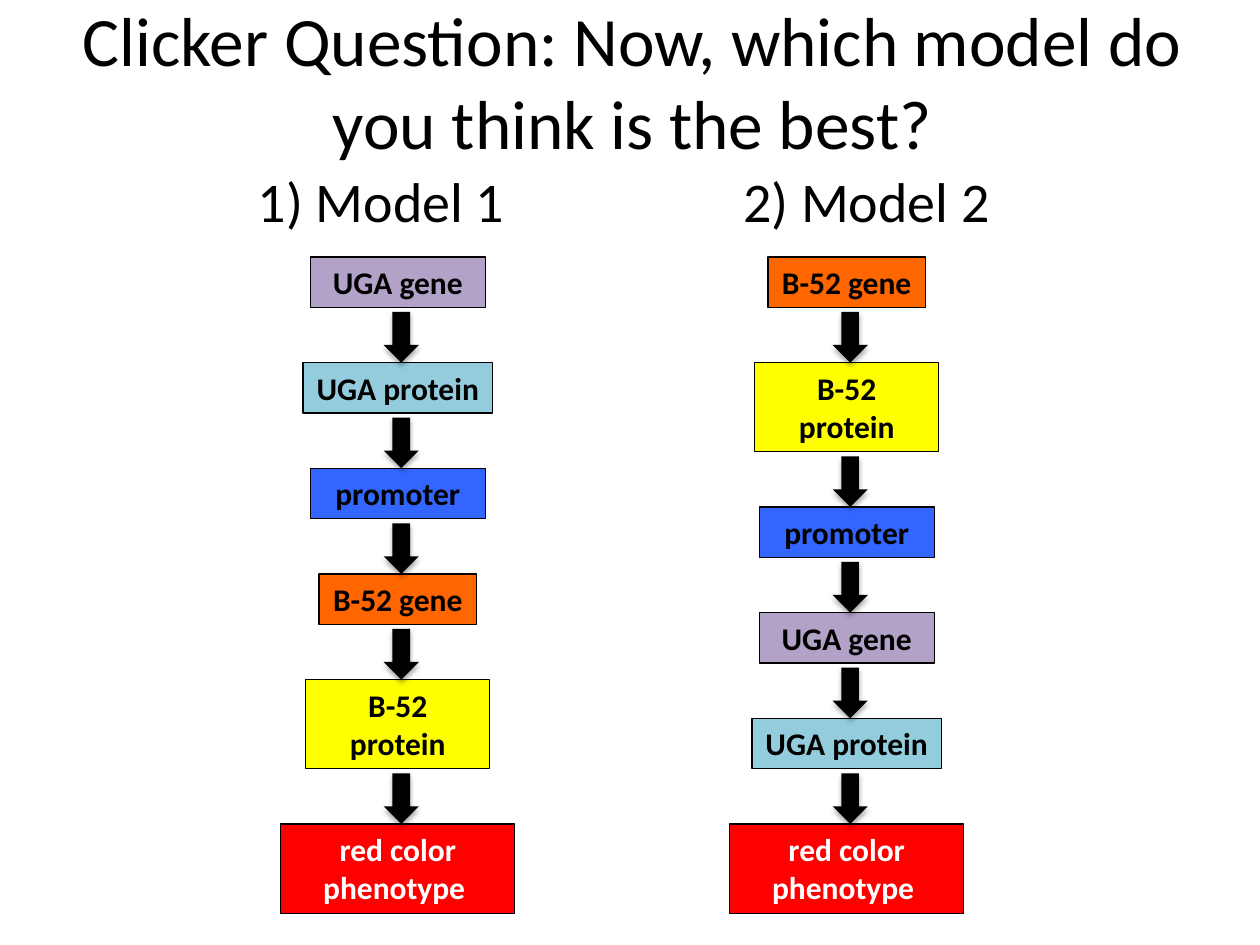
from dataclasses import dataclass

from lxml import etree
from pptx import Presentation
from pptx.dml.color import RGBColor
from pptx.enum.shapes import MSO_SHAPE
from pptx.enum.text import MSO_ANCHOR, MSO_AUTO_SIZE, PP_ALIGN
from pptx.oxml.ns import qn
from pptx.util import Cm, Pt

RECTANGLE = MSO_SHAPE.RECTANGLE
DOWN_ARROW = MSO_SHAPE.DOWN_ARROW
MIDDLE, TOP = MSO_ANCHOR.MIDDLE, MSO_ANCHOR.TOP
FIT_TEXT, NO_FIT = MSO_AUTO_SIZE.SHAPE_TO_FIT_TEXT, MSO_AUTO_SIZE.NONE
CENTER, LEFT = PP_ALIGN.CENTER, PP_ALIGN.LEFT


@dataclass(frozen=True)
class Theme:
    font: str = "Calibri"
    title_size: float = 39.6
    heading_size: float = 32
    step_size: float = 18
    border_width: float = 0.75
    black: str = "000000"
    white: str = "FFFFFF"
    orange: str = "FF6600"
    yellow: str = "FFFF00"
    purple: str = "B3A2C7"
    aqua: str = "93CDDD"
    red: str = "FF0000"
    blue: str = "3366FF"


THEME = Theme()

# Layout in centimetres
STEPS_TOP = 5.18
STEP_GAP = 1.11
LINE_HEIGHT, TWO_LINE_HEIGHT = 1.02, 1.8
ARROW_WIDTH, ARROW_HEIGHT = 0.71, 1.02
ARROW_SHIFT = 0.07

# Kind of step: text, width, height, fill, text colour, wrap
STEPS = {
    "UGA gene": ("UGA gene", 3.53, LINE_HEIGHT, THEME.purple, THEME.black, True),
    "UGA protein": ("UGA protein", 3.82, LINE_HEIGHT, THEME.aqua, THEME.black, False),
    "promoter": ("promoter", 3.53, LINE_HEIGHT, THEME.blue, THEME.black, True),
    "B-52 gene": ("B-52 gene", 3.18, LINE_HEIGHT, THEME.orange, THEME.black, True),
    "B-52 protein": ("B-52 protein", 3.71, TWO_LINE_HEIGHT, THEME.yellow, THEME.black, True),
    "phenotype": ("red color phenotype ", 4.72, TWO_LINE_HEIGHT, THEME.red, THEME.white, True),
}

# Model: heading, heading left, centre of the steps, order of the steps
MODELS = [
    ("1) Model 1", 4.95, 8.02,
     ["UGA gene", "UGA protein", "promoter", "B-52 gene", "B-52 protein", "phenotype"]),
    ("2) Model 2", 14.73, 17.07,
     ["B-52 gene", "B-52 protein", "promoter", "UGA gene", "UGA protein", "phenotype"]),
]


def apply_format(target, values):
    for name, value in values.items():
        setattr(target, name, value)


class SlideBuilder:
    def __init__(self, slide, theme):
        self.slide = slide
        self.theme = theme

    def fill_text(self, shape, text, size, color, frame_format, alignment, bold=False):
        frame = shape.text_frame
        apply_format(frame, frame_format)
        paragraph = frame.paragraphs[0]
        paragraph.alignment = alignment
        run = paragraph.add_run()
        run.text = text
        apply_format(run.font, {"name": self.theme.font, "size": Pt(size), "bold": bold})
        run.font.color.rgb = RGBColor.from_string(color)

    def add_text(self, box, text, size, frame_format, alignment):
        shape = self.slide.shapes.add_textbox(*map(Cm, box))
        self.fill_text(shape, text, size, self.theme.black, frame_format, alignment)

    def add_filled_shape(self, kind, box, fill):
        shape = self.slide.shapes.add_shape(kind, *map(Cm, box))
        shape.shadow.inherit = False
        shape.fill.solid()
        shape.fill.fore_color.rgb = RGBColor.from_string(fill)
        return shape

    def add_step(self, center, top, step):
        text, width, height, fill, color, wrap = step
        box = (center - width / 2, top, width, height)
        shape = self.add_filled_shape(RECTANGLE, box, fill)
        shape.line.color.rgb = RGBColor.from_string(self.theme.black)
        shape.line.width = Pt(self.theme.border_width)
        frame_format = {"word_wrap": wrap, "auto_size": FIT_TEXT, "vertical_anchor": TOP}
        self.fill_text(shape, text, self.theme.step_size, color, frame_format, CENTER, bold=True)

    def add_arrow(self, center, bottom):
        box = (center - ARROW_WIDTH / 2, bottom - ARROW_HEIGHT, ARROW_WIDTH, ARROW_HEIGHT)
        shape = self.add_filled_shape(DOWN_ARROW, box, self.theme.black)
        shape.line.fill.background()
        # Soft shadow straight below
        effects = shape._element.spPr.find(qn("a:effectLst"))
        shadow = etree.SubElement(effects, qn("a:outerShdw"), blurRad=str(Pt(3.1)),
                                  dist=str(Pt(1.8)), dir="5400000", rotWithShape="0")
        color = etree.SubElement(shadow, qn("a:srgbClr"), val=self.theme.black)
        etree.SubElement(color, qn("a:alpha"), val="35000")

    def add_model(self, heading, heading_left, center, step_names):
        self.add_text((heading_left, 3.23, 5.54, 1.62), heading, self.theme.heading_size,
                      {"word_wrap": False, "auto_size": FIT_TEXT}, LEFT)
        top = STEPS_TOP
        for index, name in enumerate(step_names):
            step = STEPS[name]
            self.add_step(center, top, step)
            if index:
                self.add_arrow(center + ARROW_SHIFT, top)
            top += step[2] + STEP_GAP


def main():
    presentation = Presentation()
    presentation.slide_width, presentation.slide_height = Cm(25.4), Cm(19.05)
    slide = presentation.slides.add_slide(presentation.slide_layouts[6])
    builder = SlideBuilder(slide, THEME)

    # Title
    builder.add_text((1.32, 0.03, 22.86, 3.18),
                     "Clicker Question: Now, which model do you think is the best?",
                     THEME.title_size,
                     {"word_wrap": True, "auto_size": NO_FIT, "vertical_anchor": MIDDLE}, CENTER)

    # Two competing models
    for model in MODELS:
        builder.add_model(*model)

    presentation.save("out.pptx")


if __name__ == "__main__":
    main()
